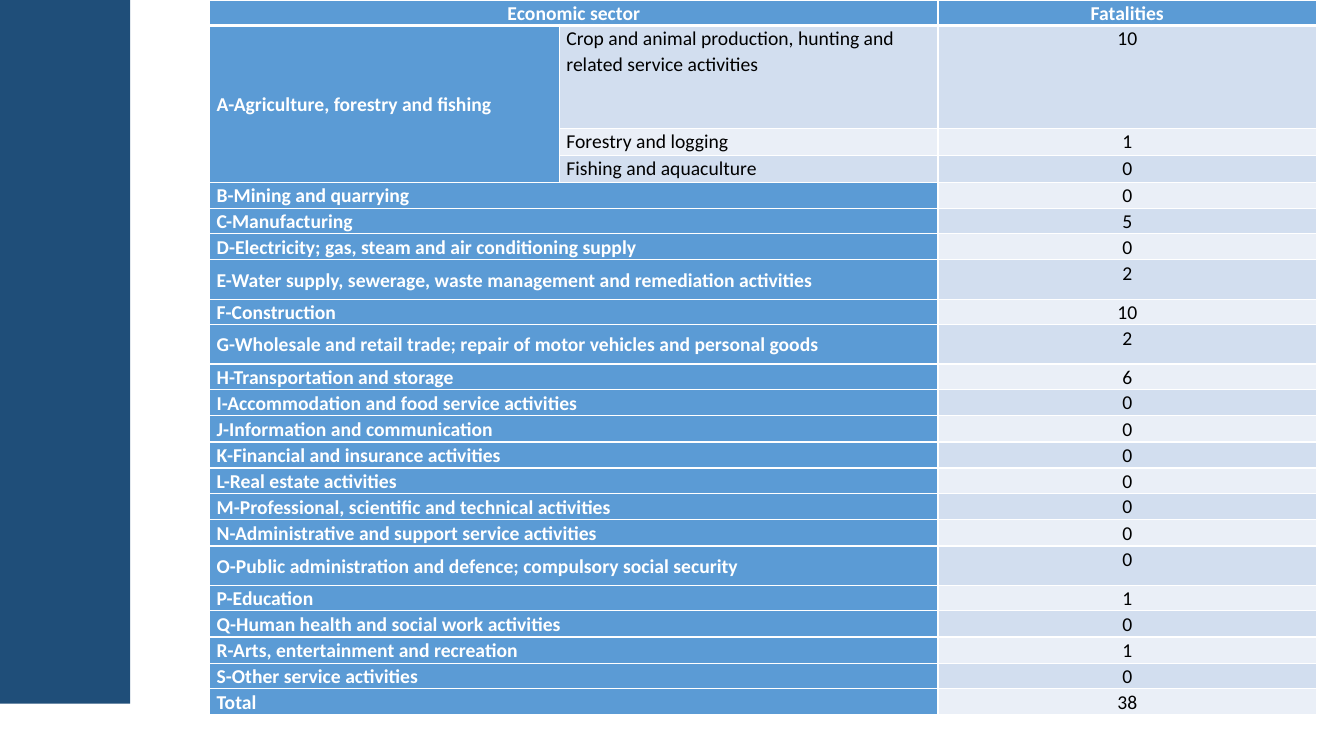
from lxml.etree import SubElement
from pptx import Presentation
from pptx.dml.color import RGBColor
from pptx.enum.shapes import MSO_SHAPE as Shape
from pptx.enum.text import MSO_ANCHOR as Anchor, PP_ALIGN as Align
from pptx.oxml.ns import qn
from pptx.util import Pt

COLORS = {
    "band": "1F4E79",
    "heading": "5B9BD5",
    "odd": "D2DEEF",
    "even": "EAEFF7",
    "white": "FFFFFF",
    "black": "000000",
}
COLUMN_WIDTHS = (249.8, 270.4, 270.4)
SHORT, MEDIUM, SUBSECTOR, TALL, TALLEST = 15.8, 18.7, 19.4, 28.1, 73.4
AGRICULTURE = "A-Agriculture, forestry and fishing"
AGRICULTURE_ROWS = (1, 3)

ROWS = [
    ("Economic sector", "", "Fatalities", SHORT),
    (AGRICULTURE, "Crop and animal production, hunting and related service activities", "10", TALLEST),
    ("", "Forestry and logging", "1", SUBSECTOR),
    ("", "Fishing and aquaculture", "0", SUBSECTOR),
    ("B-Mining and quarrying", "", "0", SHORT),
    ("C-Manufacturing", "", "5", SHORT),
    ("D-Electricity; gas, steam and air conditioning supply", "", "0", MEDIUM),
    ("E-Water supply, sewerage, waste management and remediation activities", "", "2", TALL),
    ("F-Construction", "", "10", SHORT),
    ("G-Wholesale and retail trade; repair of motor vehicles and personal goods", "", "2", TALL),
    ("H-Transportation and storage", "", "6", SHORT),
    ("I-Accommodation and food service activities", "", "0", MEDIUM),
    ("J-Information and communication", "", "0", MEDIUM),
    ("K-Financial and insurance activities", "", "0", MEDIUM),
    ("L-Real estate activities", "", "0", SHORT),
    ("M-Professional, scientific and technical activities", "", "0", MEDIUM),
    ("N-Administrative and support service activities", "", "0", MEDIUM),
    ("O-Public administration and defence; compulsory social security", "", "0", TALL),
    ("P-Education", "", "1", SHORT),
    ("Q-Human health and social work activities", "", "0", MEDIUM),
    ("R-Arts, entertainment and recreation", "", "1", MEDIUM),
    ("S-Other service activities", "", "0", SHORT),
    ("Total", "", "38", SHORT),
]


def color(name):
    return RGBColor.from_string(COLORS[name])


def add_side_band(page):
    band = page.shapes.add_shape(Shape.RECTANGLE, Pt(-1.4), Pt(0), Pt(94.3), Pt(502.6))
    band.shadow.inherit = False
    band.fill.solid()
    band.fill.fore_color.rgb = color("band")
    band.line.fill.background()


def set_borders(cell, top=1, bottom=1):
    properties = cell._tc.get_or_add_tcPr()
    for side, width in (("L", 1), ("R", 1), ("T", top), ("B", bottom)):
        line = SubElement(properties, qn(f"a:ln{side}"), w=str(Pt(width)))
        fill = SubElement(line, qn("a:solidFill"))
        SubElement(fill, qn("a:srgbClr"), val=COLORS["white"])


def fill_cell(cell, text, background, is_heading, align):
    cell.margin_left = cell.margin_right = Pt(5)
    cell.margin_top = cell.margin_bottom = Pt(0)
    cell.vertical_anchor = Anchor.MIDDLE if is_heading else Anchor.TOP
    cell.fill.solid()
    cell.fill.fore_color.rgb = color(background)
    cell.text = text
    para = cell.text_frame.paragraphs[0]
    para.alignment = align
    para.line_spacing = 1.07
    para.font.name = "Calibri"
    para.font.size = Pt(14)
    para.font.bold = is_heading
    para.font.color.rgb = color("white" if is_heading else "black")


def add_fatalities_table(page):
    height = sum(row[-1] for row in ROWS)
    frame = page.shapes.add_table(
        len(ROWS), len(COLUMN_WIDTHS), Pt(149.8), Pt(0), Pt(sum(COLUMN_WIDTHS)), Pt(height)
    )
    table = frame.table
    for column, width in zip(table.columns, COLUMN_WIDTHS):
        column.width = Pt(width)

    first, last = AGRICULTURE_ROWS
    for r, (*texts, row_height) in enumerate(ROWS):
        table.rows[r].height = Pt(row_height)
        in_agriculture = first <= r <= last
        for c, text in enumerate(texts):
            cell = table.cell(r, c)
            is_heading = r == 0 or c == 0 or (c == 1 and not in_agriculture)
            background = "heading" if is_heading else "odd" if r % 2 else "even"
            align = Align.CENTER if r == 0 or c == 2 else Align.LEFT
            set_borders(cell, top=3 if r == 1 else 1, bottom=3 if r == 0 else 1)
            fill_cell(cell, text, background, is_heading, align)
        if not in_agriculture:
            table.cell(r, 0).merge(table.cell(r, 1))
    table.cell(first, 0).merge(table.cell(last, 0))


def main():
    deck = Presentation()
    deck.slide_width, deck.slide_height = Pt(960), Pt(540)
    page = deck.slides.add_slide(deck.slide_layouts[6])
    add_side_band(page)
    add_fatalities_table(page)
    deck.save("out.pptx")


if __name__ == "__main__":
    main()
